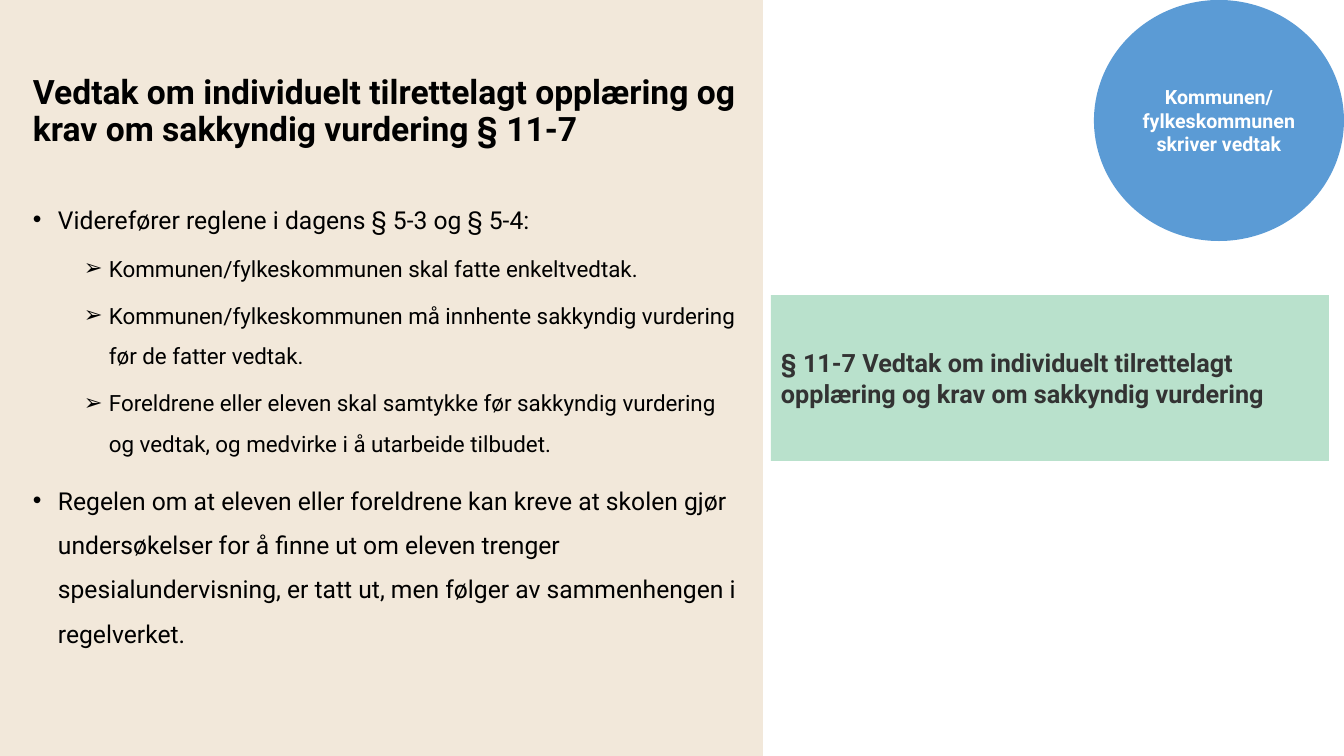
from pptx import Presentation
from pptx.dml.color import RGBColor as RGB
from pptx.enum.shapes import MSO_SHAPE as Kind
from pptx.enum.text import MSO_ANCHOR as Anchor, PP_ALIGN as Align
from pptx.oxml.ns import qn
from pptx.util import Pt
from lxml.etree import SubElement as Sub

PX = 914400 / 100.8
THEME = {
    "font": "Roboto",
    "sand": "F2E8DA", "blue": "5B9BD5", "mint": "B9E1CC",
    "black": "000000", "white": "FFFFFF", "gray": "333333",
    "title": 24, "main": 17.6, "sub": 16, "badge": 14, "card": 18,
}


def place(box, kind=None, fill=None):
    spot = [round(n * PX) for n in box]
    if kind is None:
        shape = slide.shapes.add_textbox(*spot)
    else:
        shape = slide.shapes.add_shape(kind, *spot)
        shape.shadow.inherit = False
        shape.fill.solid()
        shape.fill.fore_color.rgb = RGB.from_string(THEME[fill])
        shape.line.fill.background()
    shape.text_frame.word_wrap = True
    return shape.text_frame


def write(para, text, size, color, bold=False, align=Align.LEFT):
    para.alignment = align
    run = para.add_run()
    run.text = text
    run.font.name = THEME["font"]
    run.font.size = Pt(THEME[size])
    run.font.bold = bold
    run.font.color.rgb = RGB.from_string(THEME[color])


deck = Presentation()
deck.slide_width = round(1344 * PX)
deck.slide_height = round(756 * PX)
slide = deck.slides.add_slide(deck.slide_layouts[6])

place((0, 0, 763, 756), Kind.RECTANGLE, "sand")

title = place((23, 39, 740, 146))
title.vertical_anchor = Anchor.MIDDLE
title.paragraphs[0].line_spacing = 0.9
write(title.paragraphs[0], "Vedtak om individuelt tilrettelagt opplæring og krav om sakkyndig vurdering § 11-7",
      "title", "black", True)

LEVELS = [("main", "•", 25, 10), ("sub", "➢", 76, 5)]
POINTS = [
    (0, "Viderefører reglene i dagens § 5-3 og § 5-4:"),
    (1, "Kommunen/fylkeskommunen skal fatte enkeltvedtak."),
    (1, "Kommunen/fylkeskommunen må innhente sakkyndig vurdering før de fatter vedtak."),
    (1, "Foreldrene eller eleven skal samtykke før sakkyndig vurdering og vedtak, "
        "og medvirke i å utarbeide tilbudet."),
    (0, "Regelen om at eleven eller foreldrene kan kreve at skolen gjør undersøkelser "
        "for å finne ut om eleven trenger spesialundervisning, er tatt ut, "
        "men følger av sammenhengen i regelverket."),
]
body = place((23, 185, 725, 522))
for row, (level, text) in enumerate(POINTS):
    size, mark, left, gap = LEVELS[level]
    para = body.add_paragraph() if row else body.paragraphs[0]
    para.level = level
    para.line_spacing = 1.5
    para.space_before = Pt(gap)
    write(para, text, size, "black")
    props = para._p.get_or_add_pPr()
    props.set("marL", str(round(left * PX)))
    props.set("indent", str(round(-25 * PX)))
    Sub(props, qn("a:buFont"), typeface="Arial")
    Sub(props, qn("a:buChar"), char=mark)

badge = place((1094, 0, 250, 241), Kind.FLOWCHART_CONNECTOR, "blue")
badge.vertical_anchor = Anchor.MIDDLE
write(badge.paragraphs[0], "Kommunen/ fylkeskommunen skriver vedtak",
      "badge", "white", True, Align.CENTER)

card = place((771, 295, 558, 166), Kind.RECTANGLE, "mint")
card.vertical_anchor = Anchor.MIDDLE
write(card.paragraphs[0], "§ 11-7 Vedtak om individuelt tilrettelagt opplæring og krav om sakkyndig vurdering",
      "card", "gray", True)

deck.save("out.pptx")
